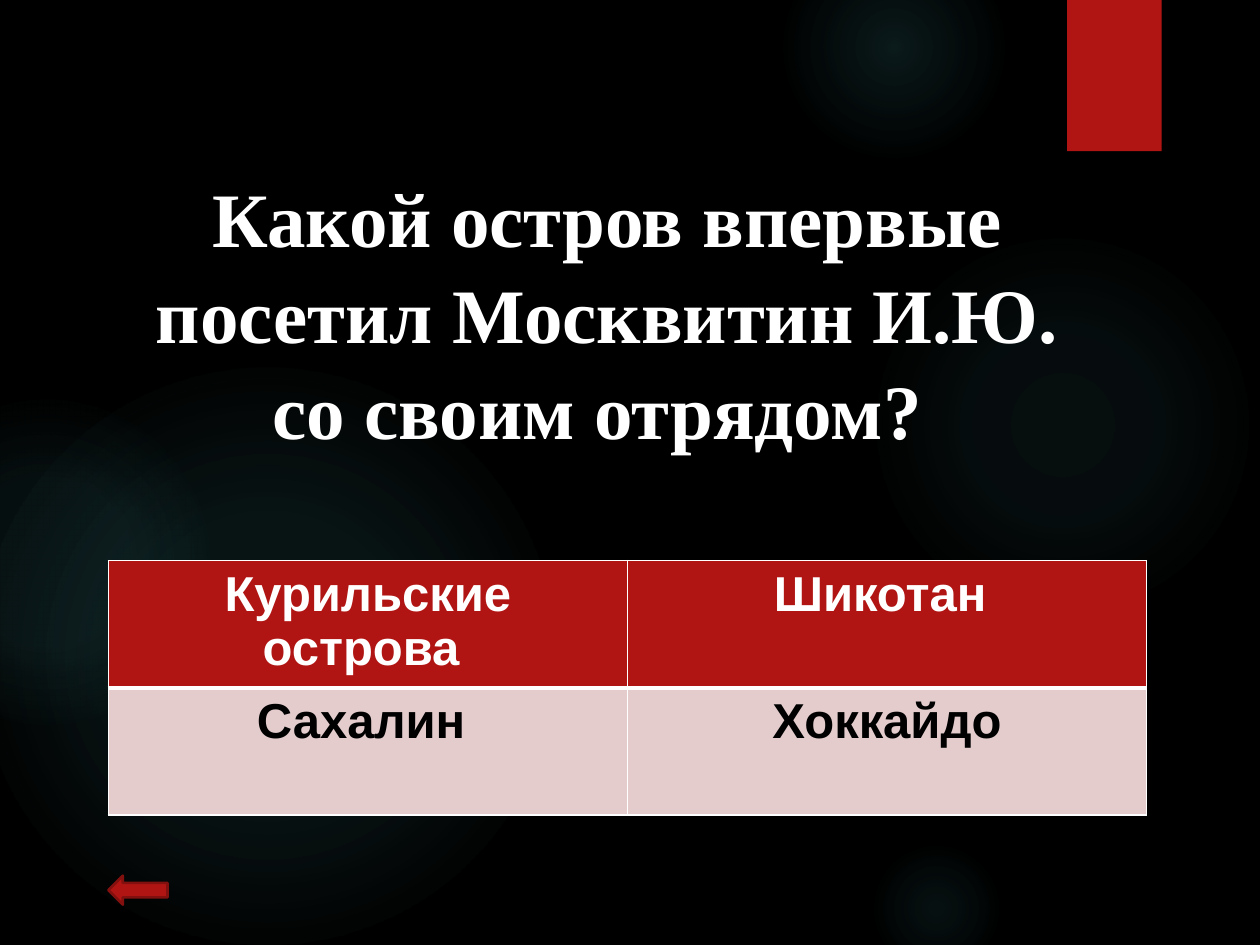
from lxml.etree import SubElement as Sub
from pptx import Presentation
from pptx.dml.color import RGBColor
from pptx.enum.shapes import MSO_SHAPE as Shape
from pptx.enum.text import MSO_ANCHOR as Anchor, PP_ALIGN as Align
from pptx.oxml import parse_xml
from pptx.oxml.ns import nsdecls, qn
from pptx.util import Inches, Pt

RED, WHITE, BLACK, PINK, TEAL = "B01513", "FFFFFF", "000000", "E4CCCC", "50B9C1"

# Content
title = "Какой остров впервые посетил Москвитин И.Ю. со своим отрядом? "
rows = [["Курильские острова ", "Шикотан "],
        ["Сахалин ", "Хоккайдо"]]
looks = [(RED, WHITE, 3), (PINK, BLACK, 1)]  # fill, text, bottom border

# Glows: left, top, size, then (stop %, alpha %)
glows = [
    (6.89, 1.83, 3.08, [(0, 7), (36, 6), (69, 0)]),
    (6.22, -0.5, 1.75, [(0, 14), (36, 7), (73, 0)]),
    (6.89, 6.67, 1.08, [(0, 9), (36, 5), (66, 0)]),
    (-0.17, 2.92, 4.58, [(0, 11), (36, 10), (75, 0)]),
    (-0.92, 3.17, 2.58, [(0, 8), (36, 8), (72, 0)]),
]


def paint(color, text):
    color.rgb = RGBColor.from_string(text)


def fill(item, color):
    item.fill.solid()
    paint(item.fill.fore_color, color)


def add(kind, x, y, w, h, color):
    shape = slide.shapes.add_shape(kind, *map(Inches, (x, y, w, h)))
    shape.shadow.inherit = False
    fill(shape, color)
    shape.line.fill.background()
    return shape


def glow(shape, stops):
    marks = "".join(
        f'<a:gs pos="{pos * 1000}"><a:srgbClr val="{TEAL}">'
        f'<a:alpha val="{alpha * 1000}"/></a:srgbClr></a:gs>'
        for pos, alpha in stops)
    grad = parse_xml(
        f'<a:gradFill {nsdecls("a")}><a:gsLst>{marks}</a:gsLst>'
        '<a:path path="circle"><a:fillToRect l="50000" t="50000" '
        'r="50000" b="50000"/></a:path></a:gradFill>')
    props = shape._element.spPr
    props.replace(props.find(qn("a:solidFill")), grad)


def edge(cell, side, width):
    line = Sub(cell._tc.get_or_add_tcPr(), qn(f"a:ln{side}"), w=str(Pt(width)))
    Sub(Sub(line, qn("a:solidFill")), qn("a:srgbClr"), val=WHITE)


def write(frame, text, size, face, color):
    frame.text = text
    para = frame.paragraphs[0]
    para.alignment = Align.CENTER
    para.font.size, para.font.name, para.font.bold = Pt(size), face, True
    paint(para.font.color, color)
    return para


deck = Presentation()
deck.slide_width, deck.slide_height = Inches(10), Inches(7.5)
slide = deck.slides.add_slide(deck.slide_layouts[5])
fill(slide.background, BLACK)

# Backdrop
for x, y, size, stops in glows:
    glow(add(Shape.OVAL, x, y, size, size, TEAL), stops)
add(Shape.RECTANGLE, 8.47, 0, 0.75, 1.2, RED)

# Back arrow
arrow = add(Shape.LEFT_ARROW, 0.86, 6.95, 0.47, 0.23, RED)
paint(arrow.line.color, "82100E")
arrow.line.width = Pt(1.5)

# Title, raised above the backdrop
head = slide.shapes.title
head.left, head.top, head.width, head.height = map(Inches, (0.86, 1.31, 7.92, 2.32))
head.text_frame.word_wrap = True
head.text_frame.vertical_anchor = Anchor.MIDDLE
para = write(head.text_frame, title, 44, "Times New Roman", WHITE)
para.line_spacing = 1.04
slide.shapes._spTree.append(head._element)

# Answers
box = map(Inches, (0.86, 4.45, 8.24, 2.02))
table = slide.shapes.add_table(len(rows), len(rows[0]), *box).table
for r, (row, (back, ink, low)) in enumerate(zip(rows, looks)):
    for c, text in enumerate(row):
        cell = table.cell(r, c)
        write(cell.text_frame, text, 28, "Arial", ink)
        top = looks[r - 1][2] if r else 1
        for side, width in zip("LRTB", (1, 1, top, low)):
            edge(cell, side, width)
        fill(cell, back)

deck.save("out.pptx")
